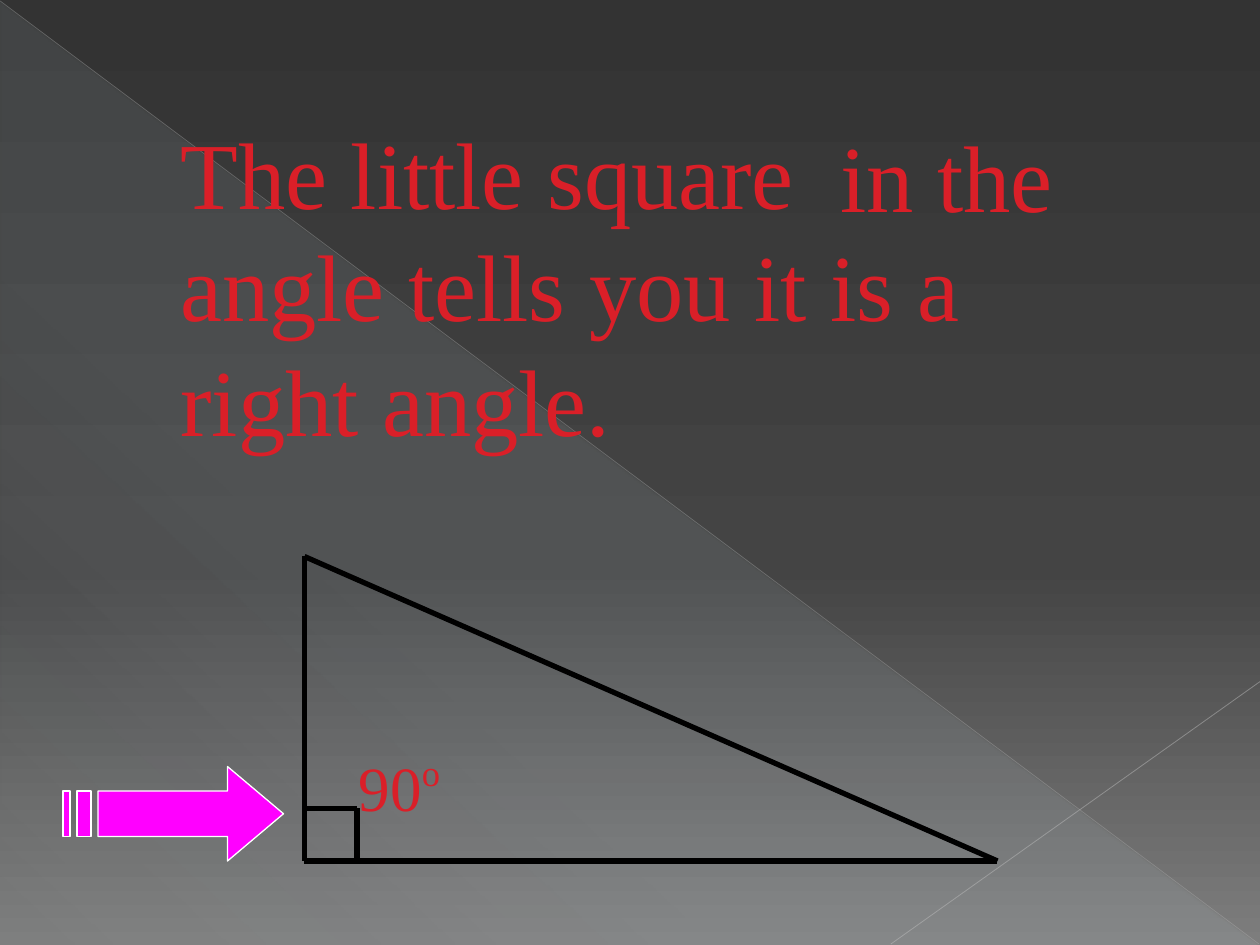
import pptx
import pptx.util
import pptx.dml.color
import pptx.enum.text
import pptx.enum.shapes
import pptx.oxml.ns
import lxml.etree

Pt = pptx.util.Pt
RGB = pptx.dml.color.RGBColor
qn = pptx.oxml.ns.qn
RED = RGB(0xDA, 0x1F, 0x28)
BLACK = RGB(0, 0, 0)
WHITE = RGB(255, 255, 255)
PINK = RGB(255, 0, 255)
DARK = RGB(0x33, 0x33, 0x33)
SLATE = RGB(0x44, 0x44, 0x44)
GREY = RGB(0x7D, 0x7D, 0x7D)
ICE = RGB(0xDE, 0xF5, 0xFA)
SILVER = RGB(0xB9, 0xB9, 0xB9)
PALE = RGB(0xC1, 0xC1, 0xC1)
FONT = "Times New Roman"


def fade(color, percent):
    alpha = lxml.etree.SubElement(color, qn("a:alpha"))
    alpha.set("val", str(percent * 1000))


def blend(fill, root, stops, angle):
    fill.gradient()
    fill.gradient_angle = angle
    ramp = next(root.iter(qn("a:gsLst")))
    for old in list(ramp):
        ramp.remove(old)
    for place, color, alpha in stops:
        stop = lxml.etree.SubElement(ramp, qn("a:gs"), pos=str(place * 1000))
        tint = lxml.etree.SubElement(stop, qn("a:srgbClr"), val=str(color))
        if alpha < 100:
            fade(tint, alpha)


def add_line(shapes, start, end, color=BLACK, width=3, alpha=100):
    line = shapes.add_connector(
        pptx.enum.shapes.MSO_CONNECTOR.STRAIGHT,
        Pt(start[0]), Pt(start[1]), Pt(end[0]), Pt(end[1]))
    line.line.color.rgb = color
    line.line.width = Pt(width)
    props = line.element.spPr
    lxml.etree.SubElement(props, qn("a:effectLst"))
    if alpha < 100:
        fade(next(props.iter(qn("a:srgbClr"))), alpha)


def set_text(shape, text, size):
    frame = shape.text_frame
    frame.word_wrap = True
    frame.auto_size = pptx.enum.text.MSO_AUTO_SIZE.NONE
    frame.vertical_anchor = pptx.enum.text.MSO_ANCHOR.TOP
    frame.margin_top = Pt(3.6 + size / 9)
    para = frame.paragraphs[0]
    para.text = text
    para.alignment = pptx.enum.text.PP_ALIGN.LEFT
    para.font.name = FONT
    para.font.size = Pt(size)
    para.font.color.rgb = RED
    return para


def add_text(slide, box, text, size):
    shape = slide.shapes.add_textbox(*map(Pt, box))
    return set_text(shape, text, size)


def draw_back(slide, box):
    left, top, width, height = box
    right, base = left + width, top + height
    blend(slide.background.fill, slide.element,
          [(0, DARK, 100), (60, SLATE, 100), (100, GREY, 100)], 270)
    wedge = slide.shapes.add_shape(
        pptx.enum.shapes.MSO_SHAPE.RIGHT_TRIANGLE,
        Pt(left + 0.5), Pt(top + 1), Pt(width - 1), Pt(height - 1))
    wedge.shadow.inherit = False
    wedge.line.fill.background()
    blend(wedge.fill, wedge.element,
          [(0, ICE, 10), (70, ICE, 8), (100, ICE, 1)], 227)
    add_line(slide.shapes, (left, top + 0.5), (right - 0.5, base - 0.5),
             SILVER, 0.39, 35)
    add_line(slide.shapes, (right, top + 389.5), (left + 509, base - 0.5),
             PALE, 0.47, 45)


def write_lines(slide, box):
    left, top, width, height = box
    title = slide.shapes.title
    title.left, title.top = Pt(left), Pt(top)
    title.width, title.height = Pt(width), Pt(72)
    set_text(title, "The little square", 54)
    tree = title.element.getparent()
    tree.remove(title.element)
    tree.append(title.element)
    add_text(slide, (left + 377, top + 2, width - 377, 72), "in the", 54)
    add_text(slide, (left, top + 64, width, 72), "angle tells you it is a", 54)
    add_text(slide, (left, top + 130, width, 72), "right angle.", 54)


def draw_angle(slide, box):
    left, top, width, height = box
    base, side = top + height, 30
    peak, heel, toe = (left, top), (left, base), (left + width, base)
    group = slide.shapes.add_group_shape()
    for start, end in ((peak, heel), (heel, toe), (toe, peak)):
        add_line(group.shapes, start, end)
    inner = (left + side, base - side)
    add_line(slide.shapes, inner, (left + side, base))
    add_line(slide.shapes, (left, base - side), inner)
    para = add_text(slide, (left + 24, base - 72, 114, 50), "90", 36)
    mark = para.add_run()
    mark.text = "o"
    mark.font.size = Pt(36)
    mark.font.language_id = None
    mark.font._element.set("baseline", "40000")


def draw_arrow(slide, box):
    left, top, width, height = box
    high, low = height / 4, height * 3 / 4
    neck, tail = width * 0.75, 19.5
    head = [(neck, 0), (neck, high), (tail, high), (tail, low),
            (neck, low), (neck, height), (width, height / 2)]
    bars = [[(near, high), (near, low), (far, low), (far, high)]
            for near, far in ((8, 16), (0, 4))]
    pen = slide.shapes.build_freeform(*head[0], scale=float(Pt(1)))
    pen.add_line_segments(head[1:], close=True)
    for bar in bars:
        pen.move_to(*bar[0])
        pen.add_line_segments(bar[1:], close=True)
    arrow = pen.convert_to_shape(Pt(left), Pt(top))
    arrow.shadow.inherit = False
    arrow.fill.solid()
    arrow.fill.fore_color.rgb = PINK
    arrow.line.color.rgb = WHITE
    arrow.line.width = Pt(0.75)


def main():
    deck = pptx.Presentation()
    deck.slide_width, deck.slide_height = Pt(720), Pt(540)
    slide = deck.slides.add_slide(deck.slide_layouts[5])
    draw_back(slide, (0, 0, 720, 540))
    write_lines(slide, (96, 56, 570, 202))
    draw_angle(slide, (174, 318, 396, 174))
    draw_arrow(slide, (36, 438, 126, 54))
    deck.save("out.pptx")


if __name__ == "__main__":
    main()
